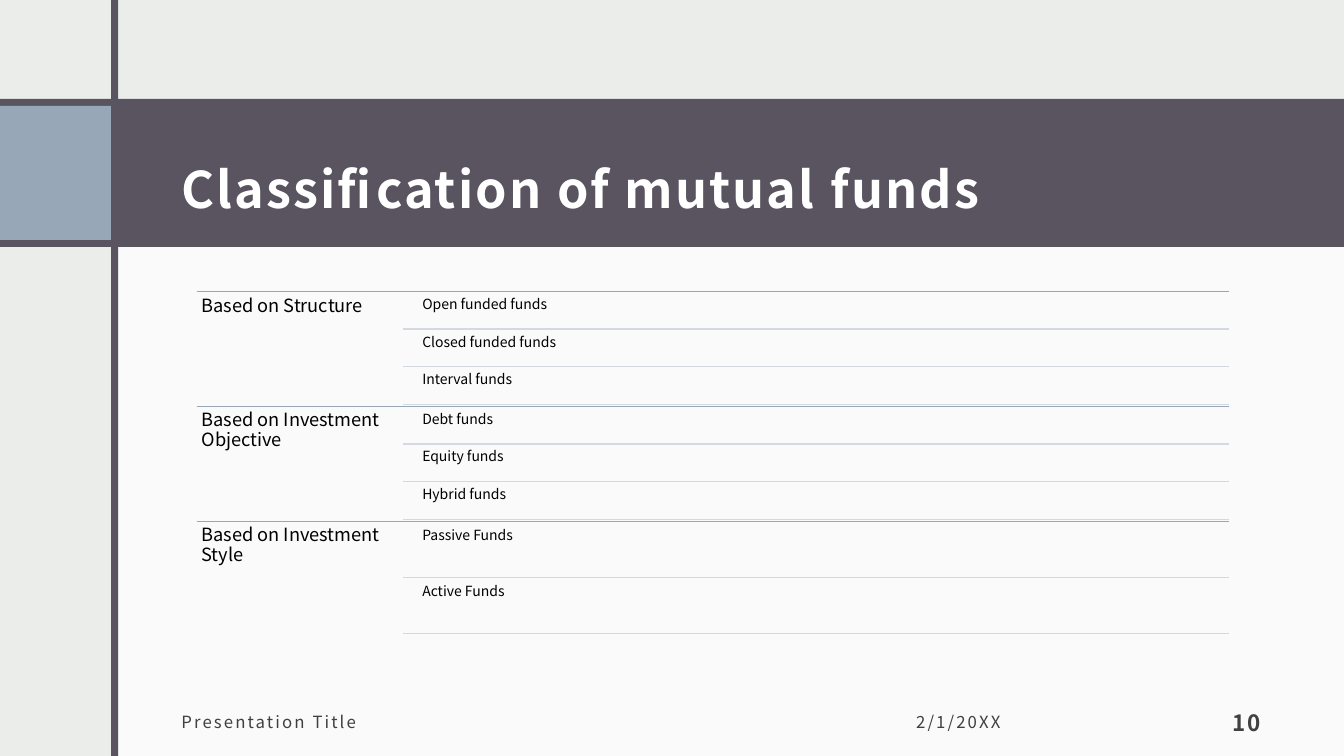
from dataclasses import dataclass

import lxml.etree
import pptx
import pptx.dml.color
import pptx.enum.shapes
import pptx.enum.text
import pptx.oxml.ns
import pptx.util

Pt = pptx.util.Pt
RGBColor = pptx.dml.color.RGBColor
Align = pptx.enum.text.PP_ALIGN
Anchor = pptx.enum.text.MSO_ANCHOR

FONT = "Noto Sans CJK JP"
PALE = RGBColor(0xEB, 0xED, 0xEB)
PLUM = RGBColor(0x59, 0x54, 0x60)
STEEL = RGBColor(0x97, 0xA7, 0xB8)
MIST = RGBColor(0xD3, 0xD9, 0xDF)
GREY = RGBColor(0x40, 0x40, 0x40)
WHITE = RGBColor(0xFF, 0xFF, 0xFF)
BLACK = RGBColor(0, 0, 0)

FRAME_INSETS = (8.64, 8.64, 8.64, 7.2)
CATEGORY_INSETS = (3.6,) * 4
FUND_INSETS = (2.88,) * 4

LIST_LEFT, LIST_TOP, LIST_RIGHT = 140.4, 208.1, 877.7
CATEGORY_WIDTH, CATEGORY_HEIGHT = 147.5, 82.1
FUND_LINE_LEFT, FUND_LEFT = 288, 298.8
GAP_RATIO = 0.05


@dataclass(frozen=True)
class Box:
    left: float
    top: float
    width: float
    height: float


@dataclass(frozen=True)
class Panel:
    box: Box
    color: RGBColor
    opacity: int = 100


@dataclass(frozen=True)
class Style:
    size: float
    color: RGBColor
    bold: bool = False
    tracking: float = 0
    insets: tuple[float, ...] = FRAME_INSETS
    anchor: Anchor = Anchor.MIDDLE
    align: Align = Align.LEFT
    line_spacing: float = 1


@dataclass(frozen=True)
class Footer:
    text: str
    box: Box
    style: Style


@dataclass(frozen=True)
class Category:
    name: str
    funds: tuple[str, ...]


TITLE_STYLE = Style(36, WHITE, True, 1.5, line_spacing=1.5)
FOOTER_STYLE = Style(12, GREY, tracking=1.5)
NUMBER_STYLE = Style(16, GREY, True, 1.5, anchor=Anchor.BOTTOM, align=Align.RIGHT)
CATEGORY_STYLE = Style(13, BLACK, insets=CATEGORY_INSETS, anchor=Anchor.TOP, line_spacing=0.9)
FUND_STYLE = Style(10, BLACK, insets=FUND_INSETS, anchor=Anchor.TOP, line_spacing=0.9)

PANELS = (
    Panel(Box(82, 167.8, 878, 372.2), WHITE, 75),
    Panel(Box(0, 70.6, 960, 105.8), PLUM),
    Panel(Box(0, 75.6, 79.2, 95.8), STEEL),
    Panel(Box(79.4, 0, 5, 540), PLUM),
)

FOOTERS = (
    Footer("Presentation Title", Box(121, 496.8, 451.4, 36), FOOTER_STYLE),
    Footer("2/1/20XX", Box(645.8, 496.8, 169.2, 36), FOOTER_STYLE),
    Footer("10", Box(832.3, 496.8, 77, 36), NUMBER_STYLE),
)

CATEGORIES = (
    Category("Based on Structure", ("Open funded funds", "Closed funded funds", "Interval funds")),
    Category("Based on Investment Objective", ("Debt funds", "Equity funds", "Hybrid funds")),
    Category("Based on Investment Style", ("Passive Funds", "Active Funds")),
)


def draw_panel(page: pptx.slide.Slide, panel: Panel) -> None:
    box = panel.box
    shape = page.shapes.add_shape(
        pptx.enum.shapes.MSO_SHAPE.RECTANGLE,
        Pt(box.left), Pt(box.top), Pt(box.width), Pt(box.height),
    )
    shape.shadow.inherit = False
    shape.line.fill.background()
    shape.fill.solid()
    shape.fill.fore_color.rgb = panel.color
    if panel.opacity < 100:
        color = shape.fill._xPr.find(".//" + pptx.oxml.ns.qn("a:srgbClr"))
        alpha = lxml.etree.SubElement(color, pptx.oxml.ns.qn("a:alpha"))
        alpha.set("val", str(panel.opacity * 1000))


def draw_rule(page: pptx.slide.Slide, left: float, top: float, color: RGBColor, width: float) -> None:
    """Draw a horizontal line from left to the right edge of the list."""
    line = page.shapes.add_connector(
        pptx.enum.shapes.MSO_CONNECTOR.STRAIGHT, Pt(left), Pt(top), Pt(LIST_RIGHT), Pt(top)
    )
    line.line.color.rgb = color
    line.line.width = Pt(width)
    lxml.etree.SubElement(line._element.spPr, pptx.oxml.ns.qn("a:effectLst"))


def write_text(shape: pptx.shapes.autoshape.Shape, text: str, style: Style) -> None:
    frame = shape.text_frame
    frame.text = text
    frame.word_wrap = True
    frame.auto_size = pptx.enum.text.MSO_AUTO_SIZE.NONE
    frame.vertical_anchor = style.anchor
    left, top, right, bottom = style.insets
    frame.margin_left, frame.margin_top = Pt(left), Pt(top)
    frame.margin_right, frame.margin_bottom = Pt(right), Pt(bottom)
    para = frame.paragraphs[0]
    para.alignment = style.align
    para.line_spacing = style.line_spacing
    span = para.runs[0]
    span.font.name = FONT
    span.font.size = Pt(style.size)
    span.font.bold = style.bold
    span.font.color.rgb = style.color
    if style.tracking:
        span.font._element.set("spc", str(round(style.tracking * 100)))


def draw_text(page: pptx.slide.Slide, text: str, box: Box, style: Style) -> None:
    shape = page.shapes.add_textbox(Pt(box.left), Pt(box.top), Pt(box.width), Pt(box.height))
    write_text(shape, text, style)


def place_title(page: pptx.slide.Slide, text: str) -> None:
    """Fill the title placeholder and bring it in front of the band."""
    title = page.shapes.title
    title.left, title.top = Pt(121), Pt(82.1)
    title.width, title.height = Pt(788.4), Pt(81.4)
    write_text(title, text, TITLE_STYLE)
    page.shapes._spTree.append(title._element)


def draw_category(page: pptx.slide.Slide, category: Category, top: float) -> None:
    """Draw a category and share its height equally among its funds."""
    draw_rule(page, LIST_LEFT, top, STEEL, 0.75)
    draw_text(page, category.name, Box(LIST_LEFT, top, CATEGORY_WIDTH, CATEGORY_HEIGHT), CATEGORY_STYLE)
    count = len(category.funds)
    height = CATEGORY_HEIGHT / (count + (count + 1) * GAP_RATIO)
    gap = height * GAP_RATIO
    for index, fund in enumerate(category.funds):
        fund_top = top + gap + index * (height + gap)
        draw_text(page, fund, Box(FUND_LEFT, fund_top, LIST_RIGHT - FUND_LEFT, height), FUND_STYLE)
        draw_rule(page, FUND_LINE_LEFT, fund_top + height, MIST, 1)


def main() -> None:
    deck = pptx.Presentation()
    deck.slide_width, deck.slide_height = Pt(960), Pt(540)
    page = deck.slides.add_slide(deck.slide_layouts.get_by_name("Title Only"))
    page.background.fill.solid()
    page.background.fill.fore_color.rgb = PALE
    for panel in PANELS:
        draw_panel(page, panel)
    place_title(page, "Classification of mutual funds")
    for footer in FOOTERS:
        draw_text(page, footer.text, footer.box, footer.style)
    for index, category in enumerate(CATEGORIES):
        draw_category(page, category, LIST_TOP + index * CATEGORY_HEIGHT)
    deck.save("out.pptx")


if __name__ == "__main__":
    main()
